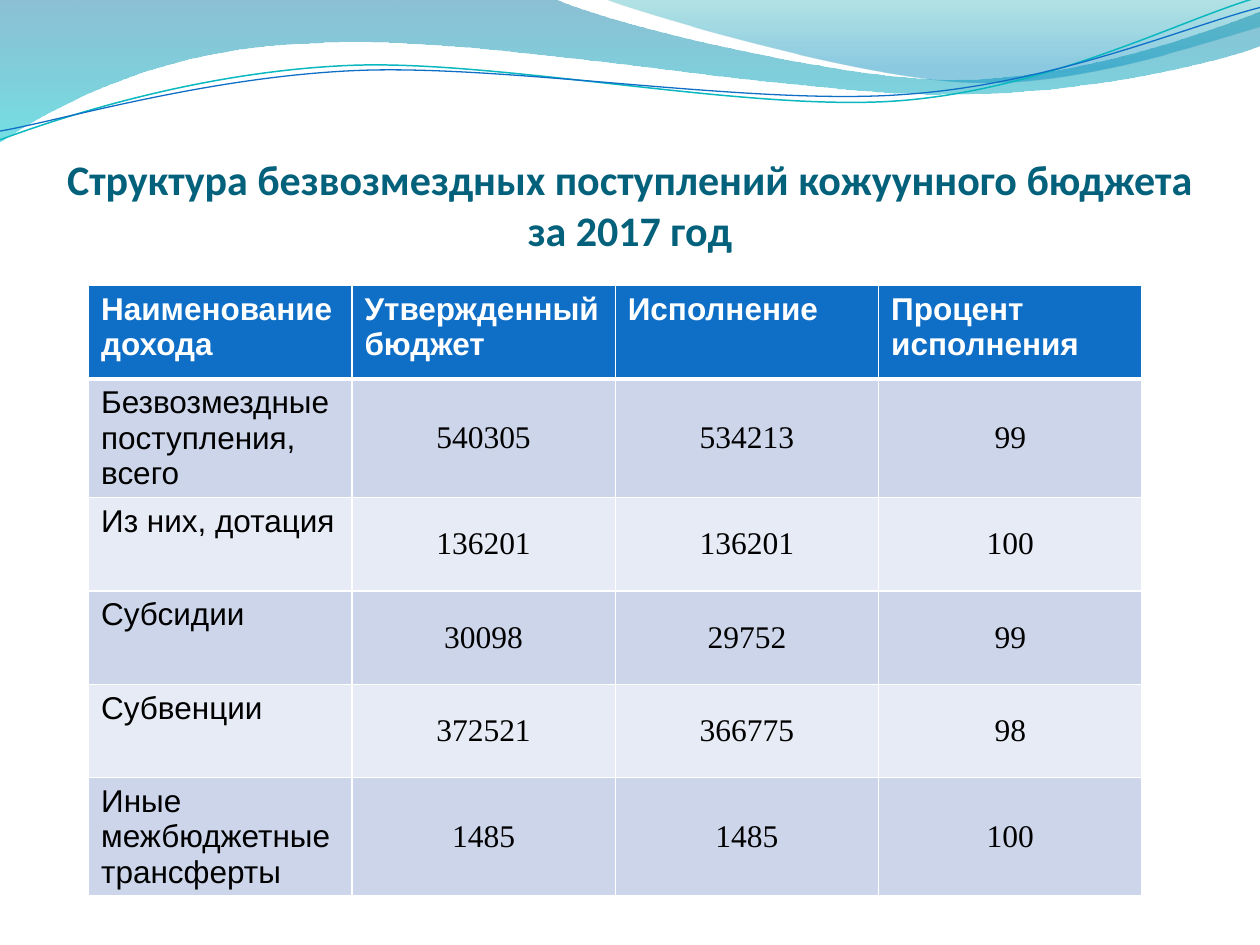
from math import cos, radians, sin

from lxml.etree import SubElement as add_element
from pptx import Presentation
from pptx.dml.color import RGBColor
from pptx.enum.text import MSO_ANCHOR as Anchor, MSO_AUTO_SIZE as AutoSize, PP_ALIGN as Align
from pptx.oxml.ns import qn
from pptx.util import Pt

WAVE_TILT = 2.7
TITLE = "Структура безвозмездных поступлений кожуунного бюджета за 2017 год"
ROWS = [
    ("Наименование дохода", "Утвержденный бюджет", "Исполнение", "Процент исполнения"),
    ("Безвозмездные поступления, всего", "540305", "534213", "99"),
    ("Из них, дотация", "136201", "136201", "100"),
    ("Субсидии", "30098", "29752", "99"),
    ("Субвенции", "372521", "366775", "98"),
    ("Иные межбюджетные трансферты", "1485", "1485", "100"),
]
LEFT_BAND = [
    [(0, 0)], [(316.8, -0.7)],
    [(342.7, 12.2), (478.1, 45.4), (545.8, 45.4)],
    [(614.2, 45.4), (689.8, 18.7), (720, 6.5)], [(720.7, 25.9)],
    [(707.8, 31.7), (626.4, 54.7), (537.1, 54)],
    [(447.8, 54), (275, 20.2), (185, 24.5)],
    [(92.9, 25.9), (33.1, 59.8), (-0.7, 81.4)], [(0, 0)],
]
RIGHT_BAND = [
    [(344.9, -0.7)],
    [(366.5, 7.9), (491, 44.6), (553.7, 46.8)],
    [(616.3, 49.7), (691.9, 23), (720, 15.1)], [(720, 0)], [(344.9, -0.7)],
]
TEAL_WAVE = [
    [(0, 79.9)],
    [(34.6, 67), (113.8, 41), (199.4, 37.4)],
    [(284.4, 33.8), (427, 64.1), (513.4, 57.6)],
    [(599.8, 51.1), (675.4, 10.8), (718.6, -1.4)],
]
BLUE_WAVE = [
    [(0, 74.9)],
    [(33.8, 69.1), (118.1, 43.9), (203.8, 40.3)],
    [(290.2, 36.7), (429.8, 60.5), (516.2, 54)],
    [(601.9, 48.2), (677.5, 15.1), (720, 4.3)],
]


def color(hex_value):
    """Turn a hex string into a colour."""
    return RGBColor.from_string(hex_value)


def turn(point, center, degrees):
    """Turn a point clockwise about a centre."""
    angle = radians(degrees)
    x, y = point[0] - center[0], point[1] - center[1]
    return (center[0] + x * cos(angle) - y * sin(angle),
            center[1] + x * sin(angle) + y * cos(angle))


def add_curve(page, outline, closed):
    """Draw a freeform of straight and cubic segments without shadow."""
    segments = [[(Pt(x), Pt(y)) for x, y in segment] for segment in outline]
    builder = page.shapes.build_freeform(*segments[0][0])
    builder.add_line_segments([segment[-1] for segment in segments[1:]], close=closed)
    shape = builder.convert_to_shape()
    shape.shadow.inherit = False
    lines = list(shape._element.spPr.iter(qn("a:lnTo")))
    for line, segment in zip(lines, segments[1:]):
        if len(segment) == 3:
            line.clear()
            curve = add_element(line.getparent(), qn("a:cubicBezTo"))
            line.getparent().replace(line, curve)
            for x, y in segment:
                add_element(curve, qn("a:pt"), x=str(x - shape.left), y=str(y - shape.top))
    return shape


def add_band(page, outline, stops):
    """Draw a band with a translucent downward gradient."""
    band = add_curve(page, outline, True)
    band.line.fill.background()
    band.fill.gradient()
    band.fill.gradient_angle = 270
    for stop, (position, hex_value, opacity) in zip(band.fill.gradient_stops, stops):
        stop.position = position
        stop.color.rgb = color(hex_value)
    nodes = band._element.spPr.iter(qn("a:srgbClr"))
    for node, (_, _, opacity) in zip(nodes, stops):
        add_element(node, qn("a:alpha"), val=str(opacity * 1000))


def add_wave(page, outline, center, hex_value, width):
    """Draw a thin open wave in a tilted frame."""
    level = [[turn(point, center, WAVE_TILT) for point in segment] for segment in outline]
    wave = add_curve(page, level, False)
    wave.rotation = 360 - WAVE_TILT
    wave.fill.background()
    wave.line.color.rgb = color(hex_value)
    wave.line.width = Pt(width)


def add_text(frame, text, font, size, hex_value, bold, align):
    """Write one formatted run into the first paragraph."""
    para = frame.paragraphs[0]
    para.alignment = align
    span = para.add_run()
    span.text = text
    span.font.name = font
    span.font.size = Pt(size)
    span.font.bold = bold
    span.font.color.rgb = color(hex_value)


def add_title(page):
    """Place the title above the waves in the stacking order."""
    box = page.shapes.title
    box._element.getparent().append(box._element)
    box.left, box.top, box.width, box.height = Pt(36), Pt(55.5), Pt(648), Pt(90)
    frame = box.text_frame
    frame.word_wrap = True
    frame.auto_size = AutoSize.NONE
    frame.vertical_anchor = Anchor.BOTTOM
    frame.margin_left = frame.margin_right = frame.margin_bottom = 0
    frame.margin_top = Pt(3.6)
    add_text(frame, TITLE, "Calibri", 24, "04617B", True, Align.CENTER)


def add_borders(cell, top, bottom):
    """Give a cell white borders of the given widths."""
    properties = cell._tc.get_or_add_tcPr()
    for side, width in (("L", 1), ("R", 1), ("T", top), ("B", bottom)):
        line = add_element(properties, qn(f"a:ln{side}"), w=str(Pt(width)))
        fill = add_element(line, qn("a:solidFill"))
        add_element(fill, qn("a:srgbClr"), val="FFFFFF")


def add_budget_table(page):
    """Add the table of budget receipts."""
    table = page.shapes.add_table(
        len(ROWS), len(ROWS[0]), Pt(50.6), Pt(163.2), Pt(602), Pt(320.4)).table
    for row_index, values in enumerate(ROWS):
        header = row_index == 0
        band_fill = "CCD5EA" if row_index % 2 else "E7EBF5"
        for column, text in enumerate(values):
            cell = table.cell(row_index, column)
            add_borders(cell, 3 if row_index == 1 else 1, 3 if header else 1)
            cell.fill.solid()
            cell.fill.fore_color.rgb = color("0F6FC6" if header else band_fill)
            number = not header and column > 0
            cell.vertical_anchor = Anchor.MIDDLE if number else Anchor.TOP
            add_text(cell.text_frame, text, "Times New Roman" if number else "Arial", 18,
                     "FFFFFF" if header else "000000", header,
                     Align.CENTER if number else Align.LEFT)


def main():
    """Build and save the slide."""
    deck = Presentation()
    deck.slide_width, deck.slide_height = Pt(720), Pt(540)
    page = deck.slides.add_slide(deck.slide_layouts[5])
    add_band(page, LEFT_BAND, [(0, "0074A1", 45), (1, "00C6CF", 55)])
    add_band(page, RIGHT_BAND, [(0, "00A1A9", 30), (0.8, "008BBF", 45)])
    add_wave(page, TEAL_WAVE, (359.3, 41.4), "0AB8BF", 0.85)
    add_wave(page, BLUE_WAVE, (359.6, 42.5), "0F6FC6", 0.75)
    add_title(page)
    add_budget_table(page)
    deck.save("out.pptx")


if __name__ == "__main__":
    main()
